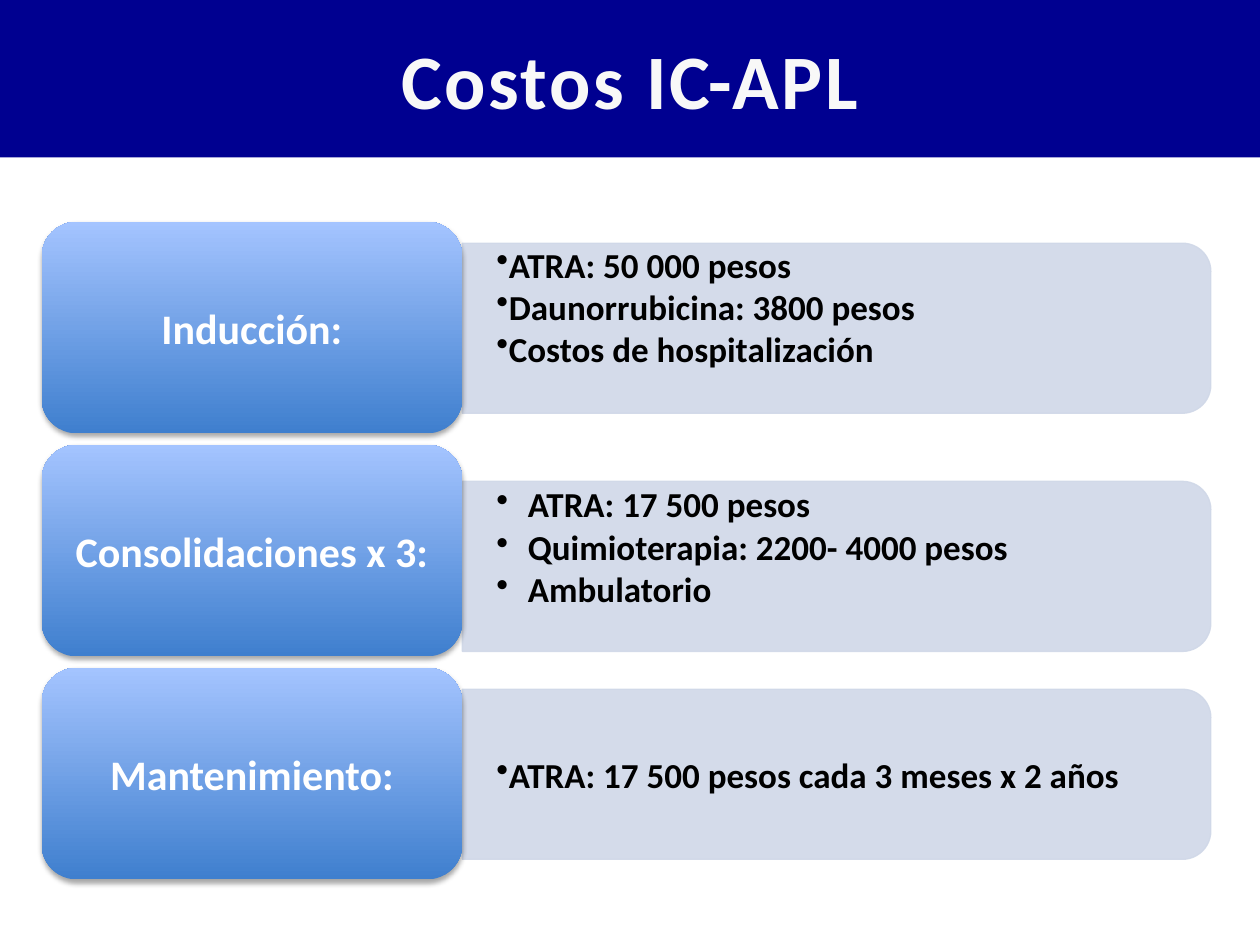
import lxml.etree
import pptx
import pptx.dml.color
import pptx.enum.shapes
import pptx.enum.text
import pptx.oxml
import pptx.oxml.ns
import pptx.util

Inches = pptx.util.Inches
Pt = pptx.util.Pt
RGBColor = pptx.dml.color.RGBColor
MSO_SHAPE = pptx.enum.shapes.MSO_SHAPE
MSO_ANCHOR = pptx.enum.text.MSO_ANCHOR
PP_ALIGN = pptx.enum.text.PP_ALIGN
qn = pptx.oxml.ns.qn

NAVY = RGBColor(0x00, 0x00, 0x90)
OFF_WHITE = RGBColor(0xF8, 0xF8, 0xF8)
WHITE = RGBColor(0xFF, 0xFF, 0xFF)
BLACK = RGBColor(0x00, 0x00, 0x00)
PALE_BLUE = RGBColor(0xD0, 0xD8, 0xE8)
DEEP_BLUE = RGBColor(0x3F, 0x7F, 0xCE)
LIGHT_BLUE = RGBColor(0xA4, 0xC4, 0xFF)

LABEL_WIDTH, LABEL_HEIGHT = 3.34, 1.68
BAR_WIDTH, BAR_HEIGHT = 5.94, 1.35
ROWS_LEFT, ROWS_TOP, ROW_STEP = 0.33, 1.76, 1.77

PHASES = [
    dict(label="Inducción:", bar_drop=0.17, anchor=MSO_ANCHOR.TOP,
         costs=["ATRA: 50 000 pesos", "Daunorrubicina: 3800 pesos",
                "Costos de hospitalización"]),
    dict(label="Consolidaciones x 3:", bar_drop=0.29, anchor=MSO_ANCHOR.TOP,
         costs=["ATRA: 17 500 pesos", "Quimioterapia: 2200- 4000 pesos",
                "Ambulatorio"],
         inset=0.05, hanging=0.25, line_spacing=0.9, space_after=2.6),
    dict(label="Mantenimiento:", bar_drop=0.17, anchor=MSO_ANCHOR.MIDDLE,
         costs=["ATRA: 17 500 pesos cada 3 meses x 2 años"]),
]


def add_run(paragraph, text, size, color):
    """Append a bold Calibri run and return it."""
    run = paragraph.add_run()
    run.text = text
    run.font.name = "Calibri"
    run.font.size = Pt(size)
    run.font.bold = True
    run.font.color.rgb = color
    return run


def add_panel(slide, kind, left, top, width, height):
    """Add a preset shape without a shadow, measured in inches."""
    panel = slide.shapes.add_shape(
        kind, Inches(left), Inches(top), Inches(width), Inches(height))
    panel.shadow.inherit = False
    return panel


def add_centred_text(panel, text, size, color):
    """Write one centred line in a panel and return its run."""
    panel.text_frame.word_wrap = True
    panel.text_frame.vertical_anchor = MSO_ANCHOR.MIDDLE
    paragraph = panel.text_frame.paragraphs[0]
    paragraph.alignment = PP_ALIGN.CENTER
    return add_run(paragraph, text, size, color)


def add_title(slide, left, top, width, height):
    """Draw the title band."""
    band = add_panel(slide, MSO_SHAPE.RECTANGLE, left, top, width, height)
    band.fill.solid()
    band.fill.fore_color.rgb = NAVY
    band.line.fill.background()
    title = add_centred_text(band, "Costos IC-APL", 44, OFF_WHITE)
    title.font._element.set("spc", "150")


def add_bar(slide, left, top, width, height):
    """Draw a translucent bar whose right corners are rounded."""
    bar = add_panel(slide, MSO_SHAPE.ROUND_2_SAME_RECTANGLE,
                    left + (width - height) / 2, top + (height - width) / 2,
                    height, width)
    bar.rotation = 90
    bar.fill.solid()
    bar.fill.fore_color.rgb = PALE_BLUE
    bar.line.color.rgb = PALE_BLUE
    bar.line.width = Pt(0.75)
    for color in bar._element.spPr.iter(qn("a:srgbClr")):
        lxml.etree.SubElement(color, qn("a:alpha"), val="90000")


def add_costs(slide, left, top, width, height, phase):
    """Write the bulleted costs of a phase."""
    box = slide.shapes.add_textbox(
        Inches(left), Inches(top), Inches(width), Inches(height))
    frame = box.text_frame
    frame.word_wrap = True
    frame.vertical_anchor = phase["anchor"]
    frame.margin_left = frame.margin_right = Inches(0.27)
    frame.margin_top = frame.margin_bottom = Inches(phase.get("inset", 0))
    hanging = Inches(phase.get("hanging", 0))
    for index, cost in enumerate(phase["costs"]):
        paragraph = frame.add_paragraph() if index else frame.paragraphs[0]
        paragraph.level = 1
        paragraph.line_spacing = phase.get("line_spacing", 1.0)
        paragraph.space_after = Pt(phase.get("space_after", 0))
        properties = paragraph._p.get_or_add_pPr()
        properties.set("marL", str(hanging))
        properties.set("indent", str(-hanging))
        lxml.etree.SubElement(properties, qn("a:buChar"), char="•")
        add_run(paragraph, cost, 20, BLACK)


def add_label(slide, left, top, width, height, text):
    """Draw the shaded label of a phase."""
    label = add_panel(slide, MSO_SHAPE.ROUNDED_RECTANGLE,
                      left, top, width, height)
    label.fill.gradient()
    label.fill.gradient_angle = 90
    for stop, color in zip(label.fill.gradient_stops, (DEEP_BLUE, LIGHT_BLUE)):
        stop.color.rgb = color
    label.line.fill.background()
    effects = label._element.spPr.find(qn("a:effectLst"))
    shadow = lxml.etree.SubElement(
        effects, qn("a:outerShdw"), blurRad=str(Pt(3.1)), dist=str(Pt(1.8)),
        dir="5400000", rotWithShape="0")
    color = lxml.etree.SubElement(shadow, qn("a:srgbClr"), val=str(BLACK))
    lxml.etree.SubElement(color, qn("a:alpha"), val="35000")
    add_centred_text(label, text, 24, WHITE)


def add_phase(slide, left, top, phase):
    """Draw one phase: its bar, costs and label."""
    bar_box = (left + LABEL_WIDTH, top + phase["bar_drop"],
               BAR_WIDTH, BAR_HEIGHT)
    add_bar(slide, *bar_box)
    add_costs(slide, *bar_box, phase)
    add_label(slide, left, top, LABEL_WIDTH, LABEL_HEIGHT, phase["label"])


def main():
    """Build and save the slide."""
    deck = pptx.Presentation()
    deck.slide_width, deck.slide_height = Inches(10), Inches(7.5)
    slide = deck.slides.add_slide(deck.slide_layouts[6])
    add_title(slide, 0, 0, 10, 1.25)
    for index, phase in enumerate(PHASES):
        add_phase(slide, ROWS_LEFT, ROWS_TOP + index * ROW_STEP, phase)
    deck.save("out.pptx")


if __name__ == "__main__":
    main()
